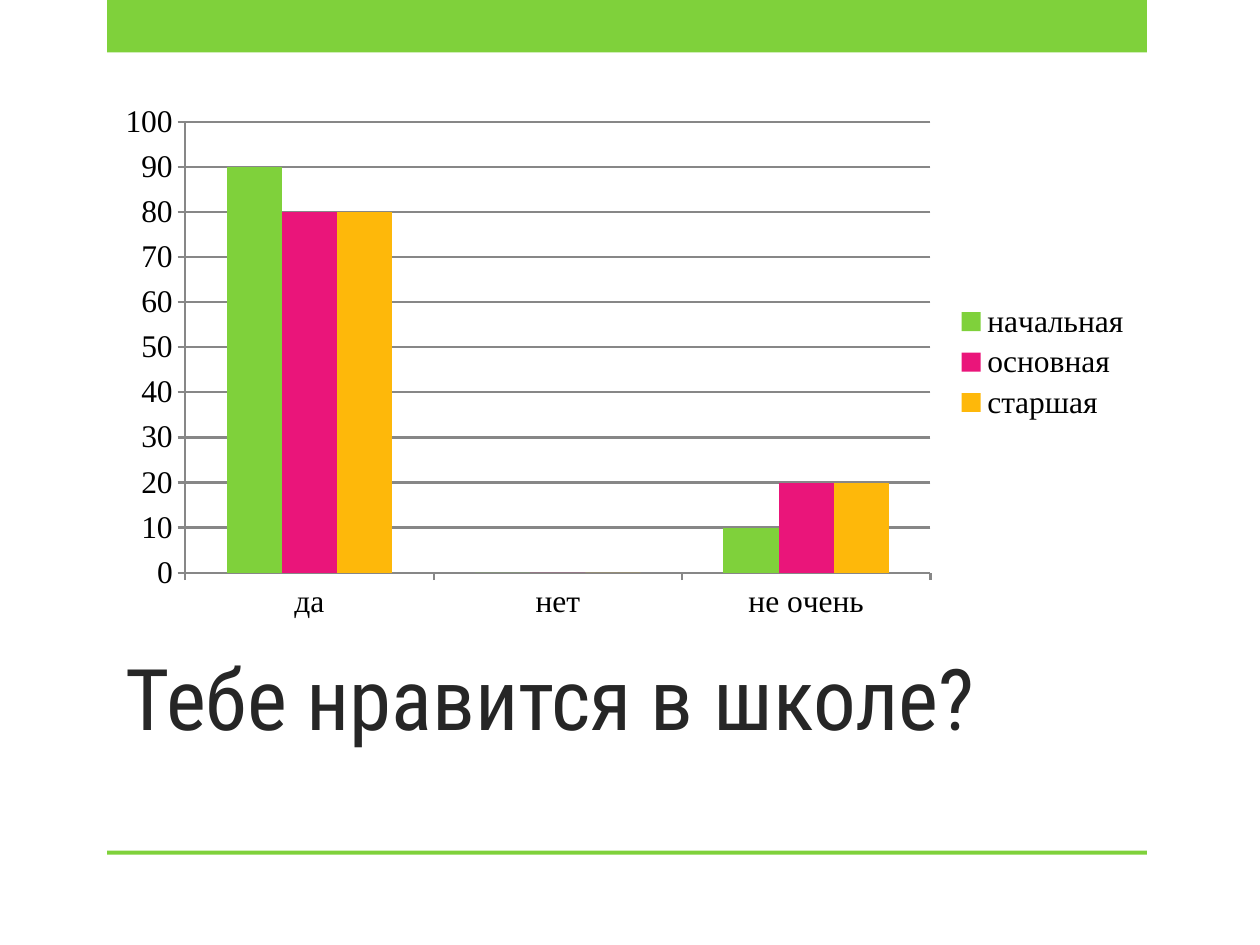
from pptx import Presentation
from pptx.chart.data import CategoryChartData
from pptx.dml.color import RGBColor
from pptx.enum.chart import XL_CHART_TYPE, XL_LEGEND_POSITION, XL_TICK_MARK
from pptx.enum.shapes import MSO_SHAPE
from pptx.enum.text import MSO_ANCHOR, PP_ALIGN
from pptx.util import Cm, Pt

GREEN = RGBColor(0x7F, 0xD1, 0x3B)
PINK = RGBColor(0xEA, 0x15, 0x7A)
AMBER = RGBColor(0xFE, 0xB8, 0x0A)
GRAY = RGBColor(0x87, 0x87, 0x87)
BLACK = RGBColor(0, 0, 0)
DARK = RGBColor(0x26, 0x26, 0x26)


class SurveySlide:
    title_font = "Roboto Condensed"
    chart_font = "Times New Roman"
    line_width = Pt(1.25)

    def __init__(self, deck):
        self.page = deck.slides.add_slide(deck.slide_layouts[6])

    def band(self, left, top, width, height):
        band = self.page.shapes.add_shape(MSO_SHAPE.RECTANGLE, left, top, width, height)
        band.shadow.inherit = False
        band.fill.solid()
        band.fill.fore_color.rgb = GREEN
        band.line.fill.background()

    def title(self, text, left, top, width, height):
        frame = self.page.shapes.add_textbox(left, top, width, height).text_frame
        frame.word_wrap = True
        frame.vertical_anchor = MSO_ANCHOR.TOP
        frame.margin_left = frame.margin_right = 0
        para = frame.paragraphs[0]
        para.text = text
        para.alignment = PP_ALIGN.LEFT
        para.font.name = self.title_font
        para.font.size = Pt(48.6)
        para.font.color.rgb = DARK

    def rule(self, line):
        line.color.rgb = GRAY
        line.width = self.line_width

    def column_chart(self, categories, series, left, top, width, height):
        data = CategoryChartData()
        data.categories = categories
        for name, values, _ in series:
            data.add_series(name, values)
        chart = self.page.shapes.add_chart(
            XL_CHART_TYPE.COLUMN_CLUSTERED, left, top, width, height, data).chart
        chart.has_title = False
        chart.font.name = self.chart_font
        chart.font.size = Pt(18)
        chart.font.color.rgb = BLACK

        # Legend
        chart.has_legend = True
        chart.legend.position = XL_LEGEND_POSITION.RIGHT
        chart.legend.include_in_layout = False

        # Axes and grid
        for axis in (chart.category_axis, chart.value_axis):
            axis.major_tick_mark = XL_TICK_MARK.OUTSIDE
            axis.minor_tick_mark = XL_TICK_MARK.NONE
            self.rule(axis.format.line)
        scale = chart.value_axis
        scale.minimum_scale, scale.maximum_scale, scale.major_unit = 0, 100, 10
        scale.has_major_gridlines = True
        self.rule(scale.major_gridlines.format.line)

        # Columns
        plot = chart.plots[0]
        plot.gap_width = 150
        plot.overlap = 0
        plot.vary_by_categories = False
        for columns, (_, _, color) in zip(plot.series, series):
            columns.format.fill.solid()
            columns.format.fill.fore_color.rgb = color


def main():
    deck = Presentation()
    deck.slide_width, deck.slide_height = Cm(25.4), Cm(19.05)
    slide = SurveySlide(deck)

    # Top and bottom bands
    for top, height in ((0, 1.06), (17.15, 0.08)):
        slide.band(Cm(2.16), Cm(top), Cm(20.96), Cm(height))

    # Question
    slide.title("Тебе нравится в школе?", Cm(2.54), Cm(12.88), Cm(20.5), Cm(4))

    # Answers by school stage
    slide.column_chart(
        ("да", "нет", "не очень"),
        (("начальная", (90, 0, 10), GREEN),
         ("основная", (80, 0, 20), PINK),
         ("старшая", (80, 0, 20), AMBER)),
        Cm(2.11), Cm(1.9), Cm(20.96), Cm(10.8))

    deck.save("out.pptx")


if __name__ == "__main__":
    main()
